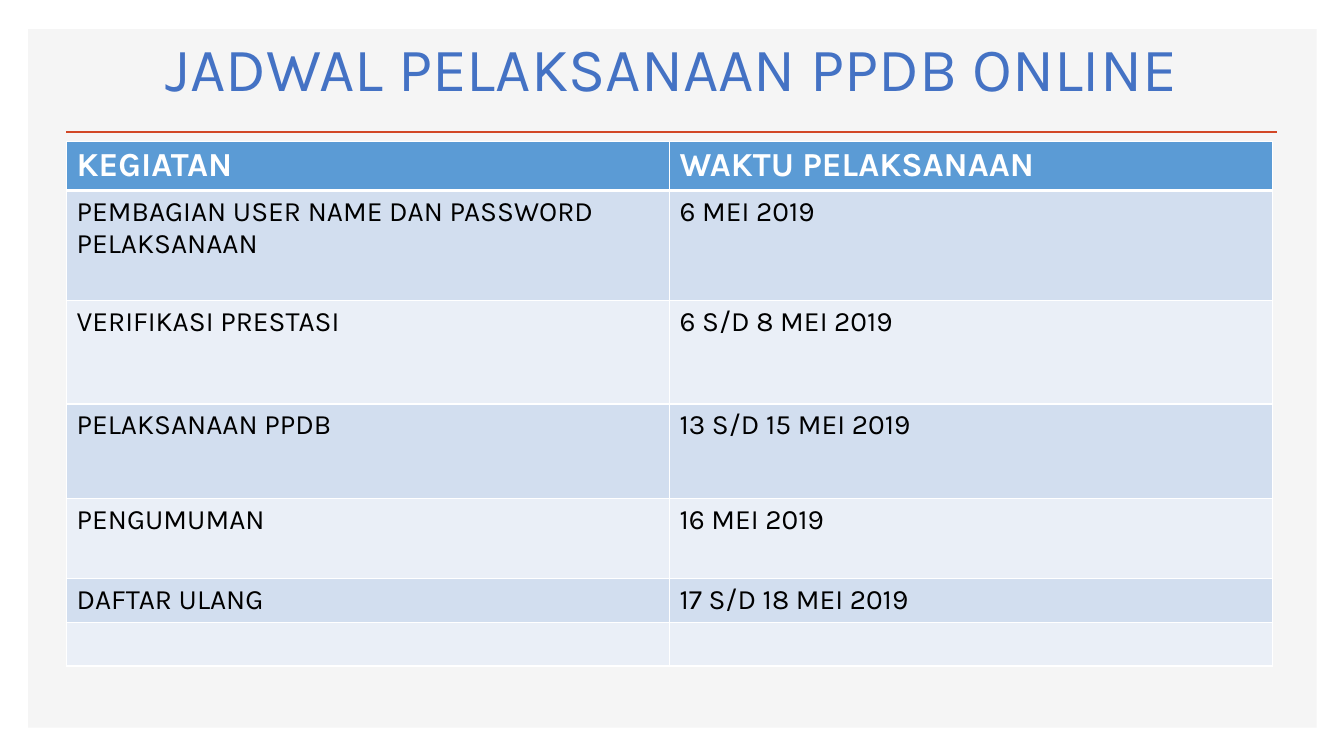
from dataclasses import dataclass

from lxml import etree
from pptx import Presentation
from pptx import util as u
from pptx.dml.color import RGBColor
from pptx.enum import shapes, text
from pptx.oxml import ns

COLORS = {
    "panel": "F5F5F5",
    "rule": "D24726",
    "title": "4472C4",
    "header": "5B9BD5",
    "odd_row": "D2DEEF",
    "even_row": "EAEFF7",
    "white": "FFFFFF",
    "black": "000000",
}
FONT = "Karla"
SLIDE_WIDTH = u.Inches(13.33)
SLIDE_HEIGHT = u.Inches(7.5)
THIN, THICK = 1, 3


@dataclass
class Area:
    """A rectangle in percent of the slide's width and height."""
    left: float
    top: float
    width: float
    height: float

    def box(self) -> tuple[int, int, int, int]:
        return (across(self.left), down(self.top),
                across(self.width), down(self.height))


@dataclass
class Activity:
    name: str
    time: str
    height: float  # percent of the slide's height


PANEL = Area(2.1, 3.87, 95.87, 92.4)
TITLE = Area(5.33, 3.2, 89.35, 11.2)
RULE = Area(4.95, 17.47, 90.1, 0)
TABLE = Area(4.95, 18.67, 89.72, 69.42)

SCHEDULE = [
    Activity("KEGIATAN", "WAKTU PELAKSANAAN", 6.5),
    Activity("PEMBAGIAN USER NAME DAN PASSWORD PELAKSANAAN", "6 MEI 2019", 14.53),
    Activity("VERIFIKASI PRESTASI", "6 S/D 8 MEI 2019", 13.73),
    Activity("PELAKSANAAN PPDB", "13 S/D 15 MEI 2019", 12.53),
    Activity("PENGUMUMAN", "16 MEI 2019", 10.53),
    Activity("DAFTAR ULANG", "17 S/D 18 MEI 2019", 5.8),
    Activity("", "", 5.8),
]


def across(percent: float) -> int:
    return round(SLIDE_WIDTH * percent / 100)


def down(percent: float) -> int:
    return round(SLIDE_HEIGHT * percent / 100)


def color(name: str) -> RGBColor:
    return RGBColor.from_string(COLORS[name])


def write(frame, words: str, *, size: float, ink: str, bold: bool = False,
          align=text.PP_ALIGN.LEFT) -> None:
    frame.word_wrap = True
    paragraph = frame.paragraphs[0]
    paragraph.alignment = align
    if not words:
        return
    run = paragraph.add_run()
    run.text = words
    run.font.name = FONT
    run.font.size = u.Pt(size)
    run.font.bold = bold
    run.font.color.rgb = color(ink)


def add_panel(slide) -> None:
    panel = slide.shapes.add_shape(shapes.MSO_SHAPE.RECTANGLE, *PANEL.box())
    panel.shadow.inherit = False
    panel.fill.solid()
    panel.fill.fore_color.rgb = color("panel")
    panel.line.fill.background()


def add_rule(slide) -> None:
    left, top, width, _ = RULE.box()
    rule = slide.shapes.add_connector(
        shapes.MSO_CONNECTOR.STRAIGHT, left, top, left + width, top)
    rule.line.color.rgb = color("rule")
    rule.line.width = u.Pt(2)
    etree.SubElement(rule.element.spPr, ns.qn("a:effectLst"))


def place_title(slide, words: str) -> None:
    """Format the title placeholder and bring it in front of the panel."""
    title = slide.shapes.title
    title.left, title.top, title.width, title.height = TITLE.box()
    frame = title.text_frame
    frame.auto_size = text.MSO_AUTO_SIZE.NONE
    frame.vertical_anchor = text.MSO_ANCHOR.MIDDLE
    write(frame, words, size=44, ink="title", align=text.PP_ALIGN.CENTER)
    title.element.getparent().append(title.element)


def add_borders(cell, widths: dict[str, int]) -> None:
    properties = cell._tc.get_or_add_tcPr()
    for side, width in widths.items():
        line = etree.SubElement(properties, ns.qn(f"a:ln{side}"), w=str(u.Pt(width)))
        fill = etree.SubElement(line, ns.qn("a:solidFill"))
        etree.SubElement(fill, ns.qn("a:srgbClr"), val=COLORS["white"])


def add_schedule(slide, activities: list[Activity]) -> None:
    frame = slide.shapes.add_table(len(activities), 2, *TABLE.box())
    table = frame.table
    for column in table.columns:
        column.width = across(TABLE.width / 2)
    for index, activity in enumerate(activities):
        table.rows[index].height = down(activity.height)
        header = index == 0
        fill = "header" if header else "odd_row" if index % 2 else "even_row"
        borders = {"L": THIN, "R": THIN,
                   "T": THICK if index == 1 else THIN,
                   "B": THICK if header else THIN}
        for column, words in enumerate((activity.name, activity.time)):
            cell = table.cell(index, column)
            add_borders(cell, borders)
            cell.fill.solid()
            cell.fill.fore_color.rgb = color(fill)
            write(cell.text_frame, words, size=24 if header else 20,
                  ink="white" if header else "black", bold=header)


def main() -> None:
    presentation = Presentation()
    presentation.slide_width = SLIDE_WIDTH
    presentation.slide_height = SLIDE_HEIGHT
    slide = presentation.slides.add_slide(presentation.slide_layouts[5])
    add_panel(slide)
    add_rule(slide)
    place_title(slide, "JADWAL PELAKSANAAN PPDB ONLINE")
    add_schedule(slide, SCHEDULE)
    presentation.save("out.pptx")


if __name__ == "__main__":
    main()
